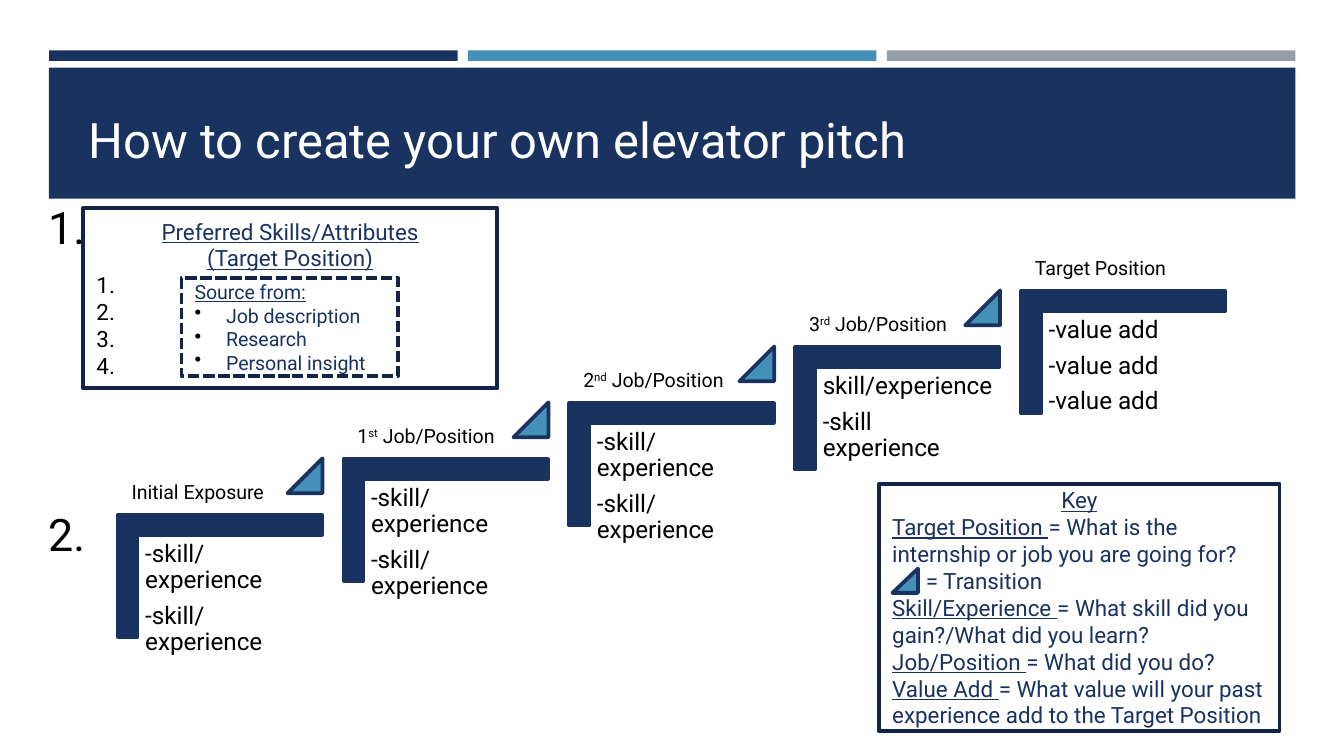
from dataclasses import dataclass

from pptx import Presentation
from pptx.dml.color import RGBColor
from pptx.enum.dml import MSO_LINE
from pptx.enum.shapes import MSO_SHAPE
from pptx.enum.text import MSO_ANCHOR, MSO_AUTO_SIZE, PP_ALIGN
from pptx.oxml.ns import qn
from pptx.util import Pt

RECTANGLE, CORNER, TRIANGLE = MSO_SHAPE.RECTANGLE, MSO_SHAPE.CORNER, MSO_SHAPE.ISOSCELES_TRIANGLE
TOP, MIDDLE, BOTTOM = MSO_ANCHOR.TOP, MSO_ANCHOR.MIDDLE, MSO_ANCHOR.BOTTOM
LEFT, CENTER = PP_ALIGN.LEFT, PP_ALIGN.CENTER
FIXED = MSO_AUTO_SIZE.NONE
DASHED = MSO_LINE.SQUARE_DOT
TITLE_ONLY = 5


@dataclass(frozen=True)
class Theme:
    font: str = "Roboto"
    navy: str = "1A3260"
    edge: str = "132547"
    blue: str = "4590B8"
    gray: str = "969FA7"
    black: str = "000000"
    white: str = "FFFFFF"
    title: float = 26.2
    marker: float = 24
    skill: float = 13
    panel: float = 12
    label: float = 10.5


class PitchSlide:
    """Draws the elements of the slide in one theme, with lengths in points."""

    def __init__(self, slide, theme):
        self.slide, self.theme = slide, theme

    def add_runs(self, paragraph, parts, size, color, align=LEFT):
        paragraph.alignment = align
        for words, style in parts:
            run = paragraph.add_run()
            run.text = words
            run.font.name, run.font.size = self.theme.font, Pt(size)
            run.font.color.rgb = RGBColor.from_string(color)
            run.font.underline = style == "underline"
            if style == "superscript":
                run._r.get_or_add_rPr().set("baseline", "30000")

    def shape(self, kind, box, fill=None, line=None, weight=2):
        shape = self.slide.shapes.add_shape(kind, *map(Pt, box))
        shape.shadow.inherit = False
        if fill:
            shape.fill.solid()
            shape.fill.fore_color.rgb = RGBColor.from_string(fill)
        else:
            shape.fill.background()
        if line:
            shape.line.color.rgb = RGBColor.from_string(line)
            shape.line.width = Pt(weight)
        else:
            shape.line.fill.background()
        return shape

    def title(self, words, box):
        title = self.slide.shapes.title
        title.left, title.top, title.width, title.height = map(Pt, box)
        frame = title.text_frame
        frame.auto_size, frame.vertical_anchor = FIXED, BOTTOM
        self.add_runs(frame.paragraphs[0], [(words, None)], self.theme.title, self.theme.white)
        self.slide.shapes._spTree.append(title._element)

    def text(self, lines, box, size, inset=None, space_after=None, spacing=None):
        frame = self.slide.shapes.add_textbox(*map(Pt, box)).text_frame
        frame.word_wrap, frame.vertical_anchor = True, TOP
        if inset is not None:
            frame.margin_left = frame.margin_right = Pt(inset)
            frame.margin_top = frame.margin_bottom = Pt(inset)
        for index, parts in enumerate(lines):
            paragraph = frame.add_paragraph() if index else frame.paragraphs[0]
            paragraph.line_spacing = spacing
            paragraph.space_after = space_after
            self.add_runs(paragraph, parts, size, self.theme.black)

    def indent(self, paragraph, margin, bullet=None, value=None):
        properties = paragraph._p.get_or_add_pPr()
        properties.set("marL", str(Pt(margin)))
        if bullet:
            properties.set("indent", str(-Pt(margin)))
            color = properties.makeelement(qn("a:buClr"), {})
            color.append(color.makeelement(qn("a:srgbClr"), {"val": self.theme.black}))
            key = "type" if bullet == "a:buAutoNum" else "char"
            properties.append(color)
            properties.append(properties.makeelement(qn(bullet), {key: value}))

    def panel(self, box, lines, size, weight=2, dash=None):
        panel = self.shape(RECTANGLE, box, line=self.theme.edge, weight=weight)
        if dash:
            panel.line.dash_style = dash
        frame = panel.text_frame
        frame.word_wrap, frame.vertical_anchor = True, MIDDLE
        for index, (parts, align, indent) in enumerate(lines):
            paragraph = frame.add_paragraph() if index else frame.paragraphs[0]
            if indent:
                self.indent(paragraph, *indent)
            self.add_runs(paragraph, parts, size, self.theme.navy, align)

    def triangle(self, box):
        self.shape(TRIANGLE, box, self.theme.blue, self.theme.navy).adjustments[0] = 1

    def step(self, dx, dy, label, skills, has_next):
        bracket = self.shape(CORNER, (85 + dx, 254 + dy, 65.5, 109.5),
                             self.theme.navy, self.theme.navy)
        bracket.adjustments[0] = bracket.adjustments[1] = 0.16
        bracket.rotation = 90
        self.text([[(skill, None)] for skill in skills], (74.2 + dx, 286.6 + dy, 98.6, 86.4),
                  self.theme.skill, inset=3.6, space_after=Pt(5), spacing=0.9)
        self.text([label], (63.4 + dx, 253.4 + dy, 113, 20), self.theme.label)
        if has_next:
            self.triangle((154.1 + dx, 245.6 + dy, 18.7, 18.7))


def job(number, suffix):
    return [(number, None), (suffix, "superscript"), (" Job/Position", None)]


def main():
    theme = Theme()
    deck = Presentation()
    deck.slide_width, deck.slide_height = Pt(720), Pt(405)
    pitch = PitchSlide(deck.slides.add_slide(deck.slide_layouts[TITLE_ONLY]), theme)

    for index, color in enumerate((theme.navy, theme.blue, theme.gray)):
        pitch.shape(RECTANGLE, (26.3 + index * 224.4, 27, 218.9, 5.6), color)
    pitch.shape(RECTANGLE, (26.2, 36.2, 667.8, 70.2), theme.navy)
    pitch.title("How to create your own elevator pitch", (40.3, 15.1, 620.6, 78.5))

    skills = ["-skill/experience"] * 2
    steps = [
        ([("Initial Exposure", None)], skills),
        (job("1", "st"), skills),
        (job("2", "nd"), skills),
        (job("3", "rd"), ["skill/experience", "-skill experience"]),
        ([("Target Position", None)], ["-value add"] * 3),
    ]
    for index, (label, items) in enumerate(steps):
        pitch.step(index * 121, index * -30, label, items, index < len(steps) - 1)

    for marker, top in (("1.", 103.7), ("2.", 267.8)):
        pitch.text([[(marker, None)]], (18.7, top, 51, 36), theme.marker)

    headings = ("Preferred Skills/Attributes", "(Target Position)")
    numbered = ([(" ", None)], LEFT, (20, "a:buAutoNum", "arabicPeriod"))
    pitch.panel((44.6, 111.6, 221.8, 96.5),
                [([(words, "underline")], CENTER, None) for words in headings] + [numbered] * 4,
                theme.panel, weight=2.25)

    sources = ("Job description", "Research", "Personal insight")
    pitch.panel((97.2, 149, 116, 52.6),
                [([("Source from:", "underline")], LEFT, None)]
                + [([(words, None)], LEFT, (16.9, "a:buChar", "•")) for words in sources],
                theme.label, dash=DASHED)

    meanings = [
        ("Target Position ", "= What is the internship or job you are going for?"),
        ("", "= Transition"),
        ("Skill/Experience ", "= What skill did you gain?/What did you learn?"),
        ("Job/Position ", "= What did you do?"),
        ("Value Add ", "= What value will your past experience add to the Target Position"),
    ]
    key_lines = [([("Key", "underline")], CENTER, None)]
    for term, meaning in meanings:
        parts = [(term, "underline")] if term else []
        key_lines.append((parts + [(meaning, None)], LEFT, None if term else (18,)))
    pitch.panel((470.9, 259.2, 214.6, 132.5), key_lines, theme.panel)
    pitch.triangle((478.1, 304.6, 13.7, 13))

    deck.save("out.pptx")


if __name__ == "__main__":
    main()
